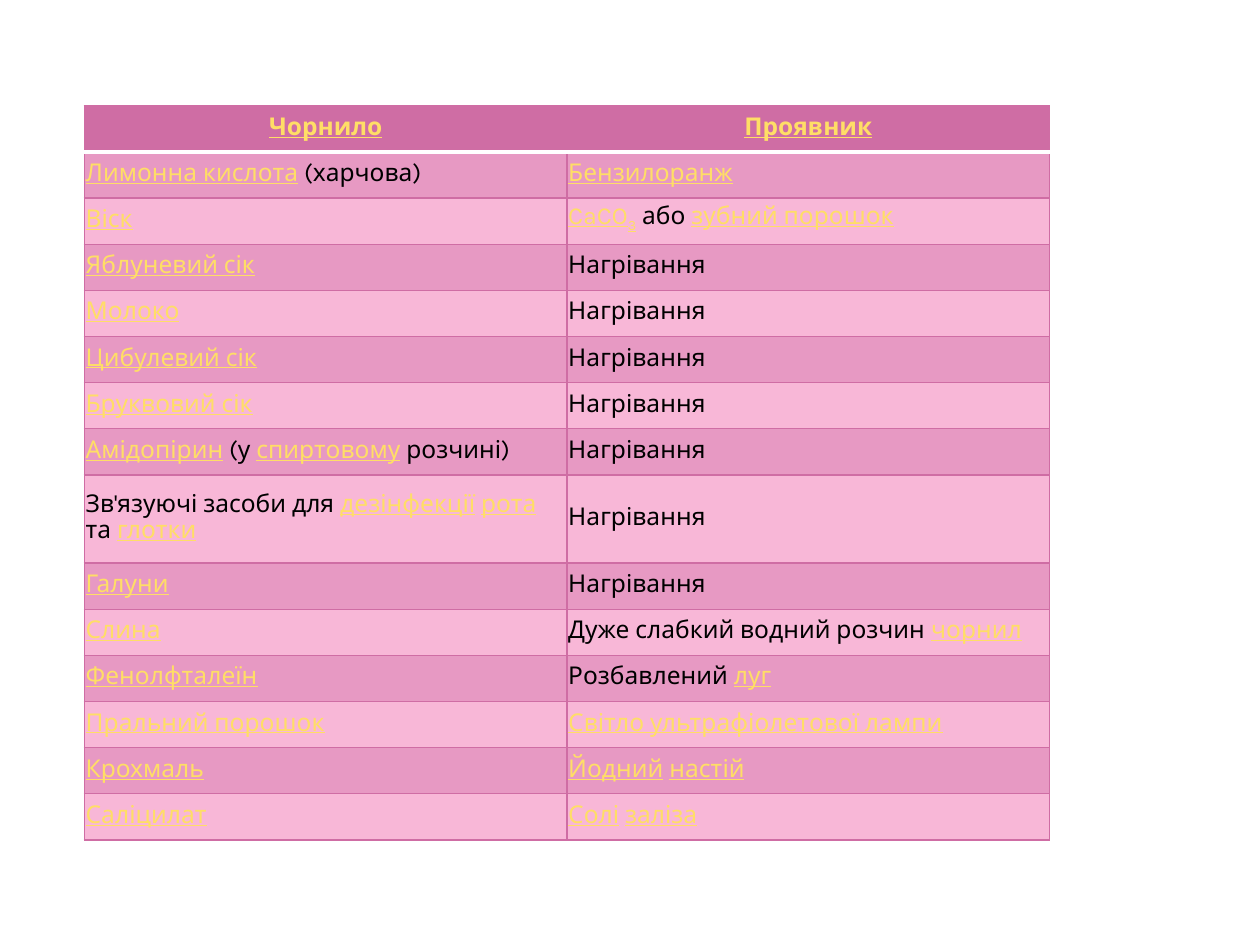
from dataclasses import dataclass

from lxml.etree import SubElement
from pptx import Presentation
from pptx.dml.color import RGBColor
from pptx.enum.text import MSO_ANCHOR, PP_ALIGN
from pptx.oxml.ns import qn
from pptx.util import Inches, Pt


@dataclass(frozen=True)
class Theme:
    """Colours and type sizes of the slide."""

    font: str = "Karla"
    size: float = 14
    line_spacing: float = 14.4
    link: str = "FFDE66"
    text: str = "000000"
    header: str = "CF6DA4"
    dark_band: str = "E799C3"
    light_band: str = "F8B7D7"
    divider: str = "FFFFFF"
    border_width: float = 0.9
    divider_width: float = 3.15


THEME = Theme()
HEATING = "Нагрівання"
ROWS = [
    ("[Чорнило]", "[Проявник]"),
    ("[Лимонна кислота] (харчова)", "[Бензилоранж]"),
    ("[Віск]", "[CaCO][_3] або [зубний порошок]"),
    ("[Яблуневий сік]", HEATING),
    ("[Молоко]", HEATING),
    ("[Цибулевий сік]", HEATING),
    ("[Бруквовий сік]", HEATING),
    ("[Амідопірин] (у [спиртовому] розчині)", HEATING),
    ("Зв'язуючі засоби для [дезінфекції] [рота] та [глотки]", HEATING),
    ("[Галуни]", HEATING),
    ("[Слина]", "Дуже слабкий водний розчин [чорнил]"),
    ("[Фенолфталеїн]", "Розбавлений [луг]"),
    ("[Пральний порошок]", "[Світло ультрафіолетової лампи]"),
    ("[Крохмаль]", "[Йодний] [настій]"),
    ("[Саліцилат]", "[Солі] [заліза]"),
]
TALL_ROW = 8


def set_border(cell, side, color, width):
    """Draw one border of a cell."""
    properties = cell._tc.get_or_add_tcPr()
    line = SubElement(properties, qn(f"a:ln{side}"), w=str(Pt(width)))
    fill = SubElement(line, qn("a:solidFill"))
    SubElement(fill, qn("a:srgbClr"), val=color)


def add_runs(paragraph, markup, bold):
    """Add runs, where brackets mark links and an underscore a subscript."""
    for index, part in enumerate(markup.replace("]", "[").split("[")):
        if not part:
            continue
        is_link = index % 2 == 1
        run = paragraph.add_run()
        run.text = part.lstrip("_")
        run.font.name = THEME.font
        run.font.size = Pt(THEME.size)
        run.font.bold = bold
        run.font.underline = is_link
        run.font.color.rgb = RGBColor.from_string(THEME.link if is_link else THEME.text)
        if part.startswith("_"):
            run._r.get_or_add_rPr().set("baseline", "-25000")


def style_cell(cell, row_index):
    """Set the borders, fill, margins and anchor of a cell by its row."""
    for side in "LRTB":
        is_divider = (row_index, side) in ((0, "B"), (1, "T"))
        color = THEME.divider if is_divider else THEME.header
        width = THEME.divider_width if is_divider else THEME.border_width
        set_border(cell, side, color, width)
    band = THEME.dark_band if row_index % 2 else THEME.light_band
    cell.fill.solid()
    cell.fill.fore_color.rgb = RGBColor.from_string(band if row_index else THEME.header)
    cell.margin_left = cell.margin_right = Inches(0.01)
    cell.margin_top = cell.margin_bottom = Inches(0.01)
    cell.vertical_anchor = MSO_ANCHOR.MIDDLE


def add_ink_table(slide, left, top, width, height):
    """Place the table of inks and their developers in the given box."""
    table = slide.shapes.add_table(len(ROWS), 2, left, top, width, height).table
    tall_height = Inches(0.7)
    row_height = (height - tall_height) // (len(ROWS) - 1)
    for column in table.columns:
        column.width = width // 2
    for row_index, texts in enumerate(ROWS):
        table.rows[row_index].height = tall_height if row_index == TALL_ROW else row_height
        for column_index, markup in enumerate(texts):
            cell = table.cell(row_index, column_index)
            style_cell(cell, row_index)
            paragraph = cell.text_frame.paragraphs[0]
            paragraph.alignment = PP_ALIGN.LEFT if row_index else PP_ALIGN.CENTER
            paragraph.line_spacing = Pt(THEME.line_spacing)
            add_runs(paragraph, markup, bold=row_index == 0)
    table.cell(TALL_ROW, 1).text_frame.paragraphs[0].alignment = PP_ALIGN.JUSTIFY


def main():
    """Build and save the presentation."""
    presentation = Presentation()
    presentation.slide_width = Inches(10)
    presentation.slide_height = Inches(7.5)
    slide = presentation.slides.add_slide(presentation.slide_layouts[6])
    add_ink_table(slide, Inches(0.67), Inches(0.84), Inches(7.66), Inches(5.83))
    presentation.save("out.pptx")


if __name__ == "__main__":
    main()
